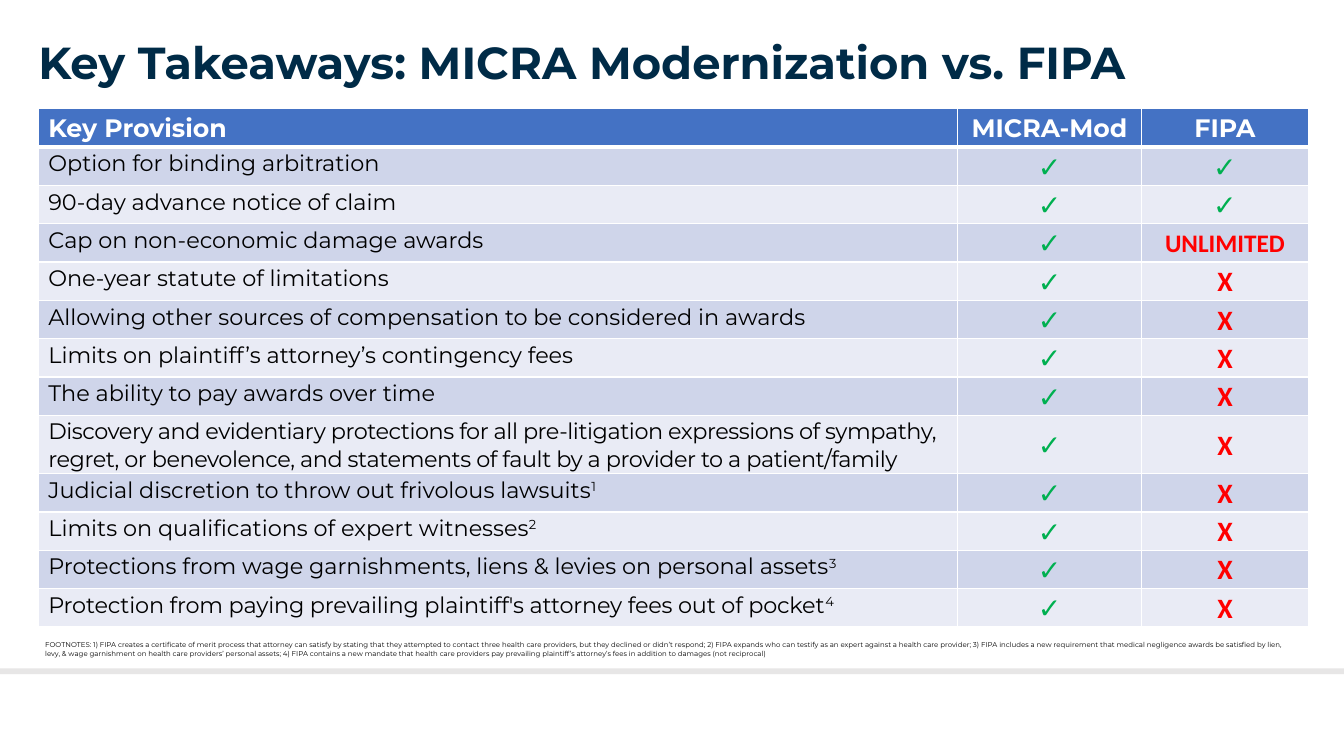
from lxml.etree import SubElement
from pptx import Presentation
from pptx.dml.color import RGBColor
from pptx.enum.shapes import MSO_SHAPE
from pptx.enum.text import MSO_ANCHOR, PP_ALIGN
from pptx.oxml.ns import qn
from pptx.util import Inches, Pt

COLORS = {
    "navy": "002B47",
    "header": "4472C4",
    "band_dark": "CFD5EA",
    "band_light": "E9EBF5",
    "rule": "E7E6E6",
    "white": "FFFFFF",
    "black": "000000",
    "green": "00B050",
    "red": "FF0000",
}
HEADINGS = ["Key Provision", "MICRA-Mod", "FIPA"]
COLUMN_WIDTHS = [9.12, 1.82, 1.66]
HEADER_HEIGHT, ROW_HEIGHT, TALL_HEIGHT = 0.37, 0.38, 0.58
CHECK = "✓"
PROVISIONS = [
    ("Option for binding arbitration", "", CHECK, 0),
    ("90-day advance notice of claim", "", CHECK, 0),
    ("Cap on non-economic damage awards", "", "UNLIMITED", 0),
    ("One-year statute of limitations", "", "X", 0),
    ("Allowing other sources of compensation to be considered in awards", "", "X", 0),
    ("Limits on plaintiff’s attorney’s contingency fees", "", "X", 0),
    ("The ability to pay awards over time", "", "X", 0),
    ("Discovery and evidentiary protections for all pre-litigation expressions of sympathy, "
     "regret, or benevolence, and statements of fault by a provider to a patient/family",
     "", "X", -30),
    ("Judicial discretion to throw out frivolous lawsuits", "1", "X", 0),
    ("Limits on qualifications of expert witnesses", "2", "X", 0),
    ("Protections from wage garnishments, liens & levies on personal assets", "3", "X", 0),
    ("Protection from paying prevailing plaintiff's attorney fees out of pocket", "4", "X", -10),
]
TALL_ROW = 8
FOOTNOTES = (
    "FOOTNOTES: 1) FIPA creates a certificate of merit process that attorney can satisfy by "
    "stating that they attempted to contact three health care providers, but they declined or "
    "didn’t respond; 2) FIPA expands who can testify as an expert against a health care "
    "provider; 3) FIPA includes a new requirement that medical negligence awards be satisfied "
    "by lien, levy, & wage garnishment on health care providers’ personal assets; 4) FIPA "
    "contains a new mandate that health care providers pay prevailing plaintiff’s attorney’s "
    "fees in addition to damages (not reciprocal)"
)


def rgb(name):
    return RGBColor.from_string(COLORS[name])


def add_span(para, text, size, color, bold=False, font="Montserrat", spacing=0, raised=False):
    span = para.add_run()
    span.text = text
    span.font.size = Pt(size)
    span.font.name = font
    span.font.bold = bold
    span.font.color.rgb = rgb(color)
    properties = span._r.get_or_add_rPr()
    if spacing:
        properties.set("spc", str(spacing))
    if raised:
        properties.set("baseline", "30000")


def add_rule(page):
    rule = page.shapes.add_shape(
        MSO_SHAPE.RECTANGLE, Inches(0), Inches(6.63), Inches(13.33), Inches(0.06))
    rule.shadow.inherit = False
    rule.fill.solid()
    rule.fill.fore_color.rgb = rgb("rule")
    rule.line.fill.background()


def add_text(page, place, text, size, color, line_spacing, bold=False):
    box = page.shapes.add_textbox(*map(Inches, place))
    frame = box.text_frame
    frame.word_wrap = True
    para = frame.paragraphs[0]
    para.line_spacing = line_spacing
    add_span(para, text, size, color, bold)
    return frame


def add_title(page):
    frame = add_text(page, (0.38, 0.37, 12.11, 0.59),
                     "Key Takeaways: MICRA Modernization vs. FIPA", 32, "navy", 0.9, True)
    frame.margin_left = frame.margin_right = frame.margin_top = 0
    frame.margin_bottom = Inches(0.05)
    frame.vertical_anchor = MSO_ANCHOR.MIDDLE


def style_cell(cell, fill, top, bottom, bottom_line=1):
    cell.margin_left = cell.margin_right = Inches(0.1)
    cell.margin_top = Inches(top)
    cell.margin_bottom = Inches(bottom)
    properties = cell._tc.get_or_add_tcPr()
    for side, width in (("L", 1), ("R", 1), ("T", 1), ("B", bottom_line)):
        line = SubElement(properties, qn(f"a:ln{side}"), w=str(Pt(width)))
        paint = SubElement(line, qn("a:solidFill"))
        SubElement(paint, qn("a:srgbClr"), val=COLORS["white"])
    cell.fill.solid()
    cell.fill.fore_color.rgb = rgb(fill)


def fill_header(table):
    for column, heading in enumerate(HEADINGS):
        cell = table.cell(0, column)
        style_cell(cell, "header", 0.04, 0.04, 3)
        para = cell.text_frame.paragraphs[0]
        para.alignment = PP_ALIGN.CENTER if column else PP_ALIGN.LEFT
        add_span(para, heading, 18, "white", True)


def fill_mark(cell, mark):
    cell.vertical_anchor = MSO_ANCHOR.MIDDLE
    para = cell.text_frame.paragraphs[0]
    para.alignment = PP_ALIGN.CENTER
    if mark == CHECK:
        add_span(para, mark, 20, "green", True)
    else:
        add_span(para, mark, 20 if mark == "X" else 18, "red", True, "Calibri")


def fill_provision(table, row, provision, note, fipa, spacing):
    cells = [table.cell(row, column) for column in range(len(HEADINGS))]
    for cell in cells:
        style_cell(cell, "band_dark" if row % 2 else "band_light", 0.03, 0.01)
    para = cells[0].text_frame.paragraphs[0]
    add_span(para, provision, 16, "black", spacing=spacing)
    if note:
        add_span(para, note, 16, "black", spacing=spacing, raised=True)
    fill_mark(cells[1], CHECK)
    fill_mark(cells[2], fipa)


def add_comparison(page):
    heights = [HEADER_HEIGHT] + [ROW_HEIGHT] * len(PROVISIONS)
    heights[TALL_ROW] = TALL_HEIGHT
    table = page.shapes.add_table(
        len(heights), len(HEADINGS), Inches(0.38), Inches(1.08),
        Inches(sum(COLUMN_WIDTHS)), Inches(sum(heights))).table
    for column, width in zip(table.columns, COLUMN_WIDTHS):
        column.width = Inches(width)
    for row, height in zip(table.rows, heights):
        row.height = Inches(height)
    fill_header(table)
    for row, provision in enumerate(PROVISIONS, 1):
        fill_provision(table, row, *provision)


def main():
    deck = Presentation()
    deck.slide_width = Inches(13.33)
    deck.slide_height = Inches(7.5)
    page = deck.slides.add_slide(deck.slide_layouts[6])
    add_rule(page)
    add_title(page)
    add_comparison(page)
    add_text(page, (0.35, 6.29, 12.63, 0.38), FOOTNOTES, 5, "black", 1.15)
    deck.save("out.pptx")


if __name__ == "__main__":
    main()
